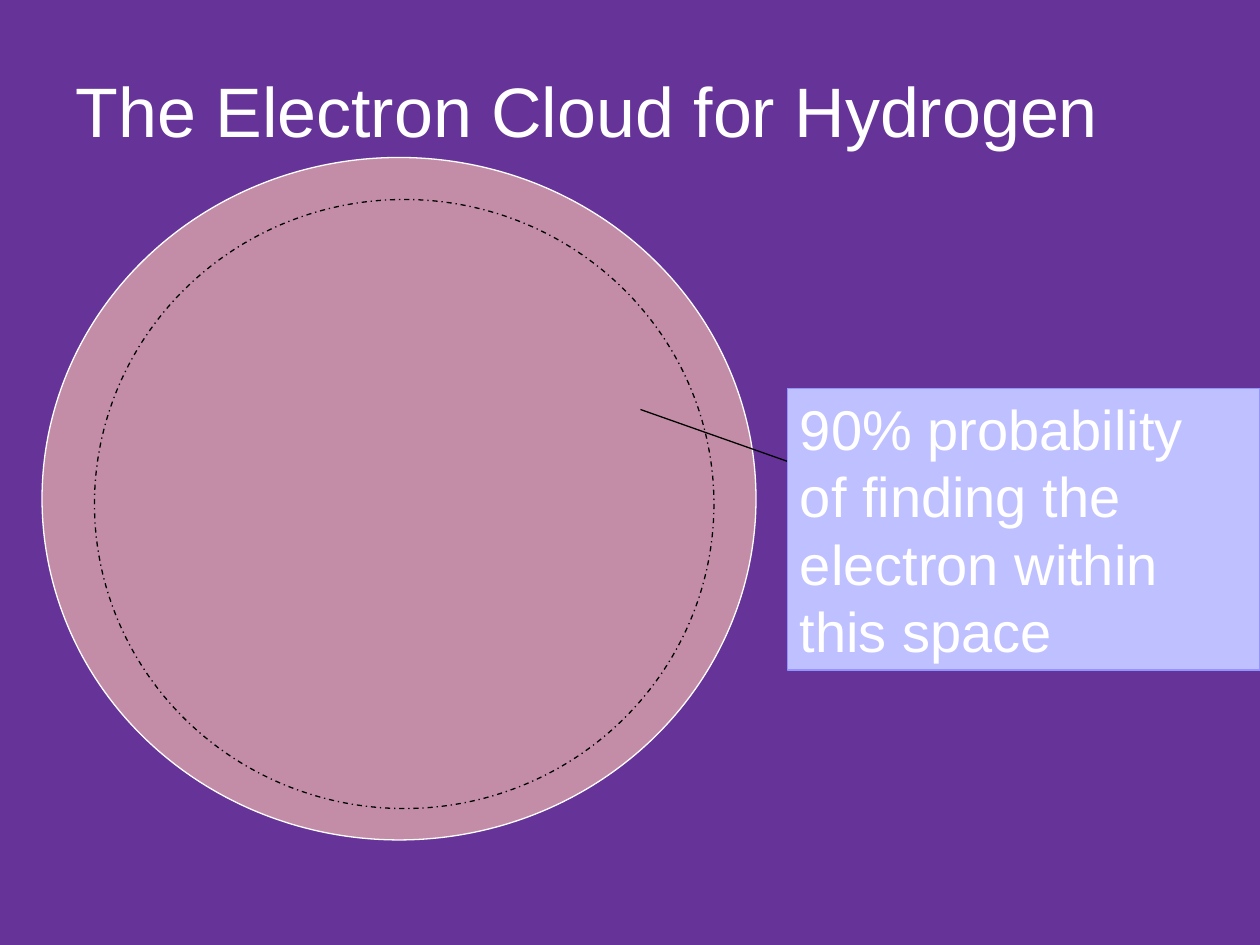
import pptx
import pptx.dml.color
import pptx.enum.dml
import pptx.enum.shapes
import pptx.enum.text
import pptx.oxml.ns
import pptx.util
import lxml.etree

RGBColor = pptx.dml.color.RGBColor
PURPLE = RGBColor(0x66, 0x33, 0x99)
PINK = RGBColor(0xFF, 0xC7, 0xB2)
LAVENDER = RGBColor(0xBF, 0xC0, 0xFF)
PERIWINKLE = RGBColor(0x92, 0x94, 0xFF)
WHITE = RGBColor(0xFF, 0xFF, 0xFF)
BLACK = RGBColor(0x00, 0x00, 0x00)

COLUMNS, ROWS = 120, 90
SHAPES = pptx.enum.shapes.MSO_SHAPE
ANCHORS = pptx.enum.text.MSO_ANCHOR


class SlideBuilder:
    font_name = "Arial"
    line_width = pptx.util.Pt(0.75)

    def __init__(self, deck):
        self.cell_width = deck.slide_width / COLUMNS
        self.cell_height = deck.slide_height / ROWS
        self.slide = deck.slides.add_slide(deck.slide_layouts[5])
        fill = self.slide.background.fill
        fill.solid()
        fill.fore_color.rgb = PURPLE

    def place(self, column, row):
        return round(column * self.cell_width), round(row * self.cell_height)

    def add_text(self, frame, lines, size, anchor, spacing=None):
        frame.word_wrap = True
        frame.vertical_anchor = anchor
        for index, text in enumerate(lines):
            para = frame.add_paragraph() if index else frame.paragraphs[0]
            para.alignment = pptx.enum.text.PP_ALIGN.LEFT
            para.line_spacing = spacing
            span = para.add_run()
            span.text = text
            span.font.name = self.font_name
            span.font.size = pptx.util.Pt(size)
            span.font.color.rgb = WHITE

    def outline(self, line, color, dash=None):
        line.color.rgb = color
        line.width = self.line_width
        if dash is not None:
            line.dash_style = dash

    def title(self, text, column, row, columns, rows):
        box = self.slide.shapes.title
        box.left, box.top = self.place(column, row)
        box.width, box.height = self.place(columns, rows)
        self.add_text(box.text_frame, [text], 40, ANCHORS.BOTTOM)

    def shape(self, kind, column, row, columns, rows, line_color,
              fill_color=None, opacity=100, dash=None):
        shape = self.slide.shapes.add_shape(
            kind, *self.place(column, row), *self.place(columns, rows))
        shape.shadow.inherit = False
        self.outline(shape.line, line_color, dash)
        if fill_color is None:
            shape.fill.background()
            return shape
        shape.fill.solid()
        shape.fill.fore_color.rgb = fill_color
        if opacity < 100:
            solid = shape._element.spPr.find(pptx.oxml.ns.qn("a:solidFill"))
            alpha = lxml.etree.SubElement(solid[0], pptx.oxml.ns.qn("a:alpha"))
            alpha.set("val", str(opacity * 1000))
        return shape

    def line(self, start, end, color):
        line = self.slide.shapes.add_connector(
            pptx.enum.shapes.MSO_CONNECTOR.STRAIGHT,
            *self.place(*start), *self.place(*end))
        self.outline(line.line, color)
        lxml.etree.SubElement(
            line._element.spPr, pptx.oxml.ns.qn("a:effectLst"))

    def label(self, lines, column, row, columns, rows):
        box = self.shape(SHAPES.RECTANGLE, column, row, columns, rows,
                         PERIWINKLE, LAVENDER)
        self.add_text(box.text_frame, lines, 32, ANCHORS.TOP,
                      pptx.util.Pt(38.4))


def main():
    deck = pptx.Presentation()
    deck.slide_width = pptx.util.Inches(10)
    deck.slide_height = pptx.util.Inches(7.5)
    builder = SlideBuilder(deck)
    builder.title("The Electron Cloud for Hydrogen", 6, 6, 108, 9)
    builder.shape(SHAPES.OVAL, 4, 15, 68, 65, WHITE, PINK, opacity=61)
    builder.shape(SHAPES.OVAL, 9, 19, 59, 58, BLACK,
                  dash=pptx.enum.dml.MSO_LINE.DASH_DOT)
    builder.line((61, 39), (78, 45), BLACK)
    builder.label(["90% probability",
                   "of finding the electron within this space"],
                  75, 37, 45, 26.8)
    deck.save("out.pptx")


if __name__ == "__main__":
    main()
